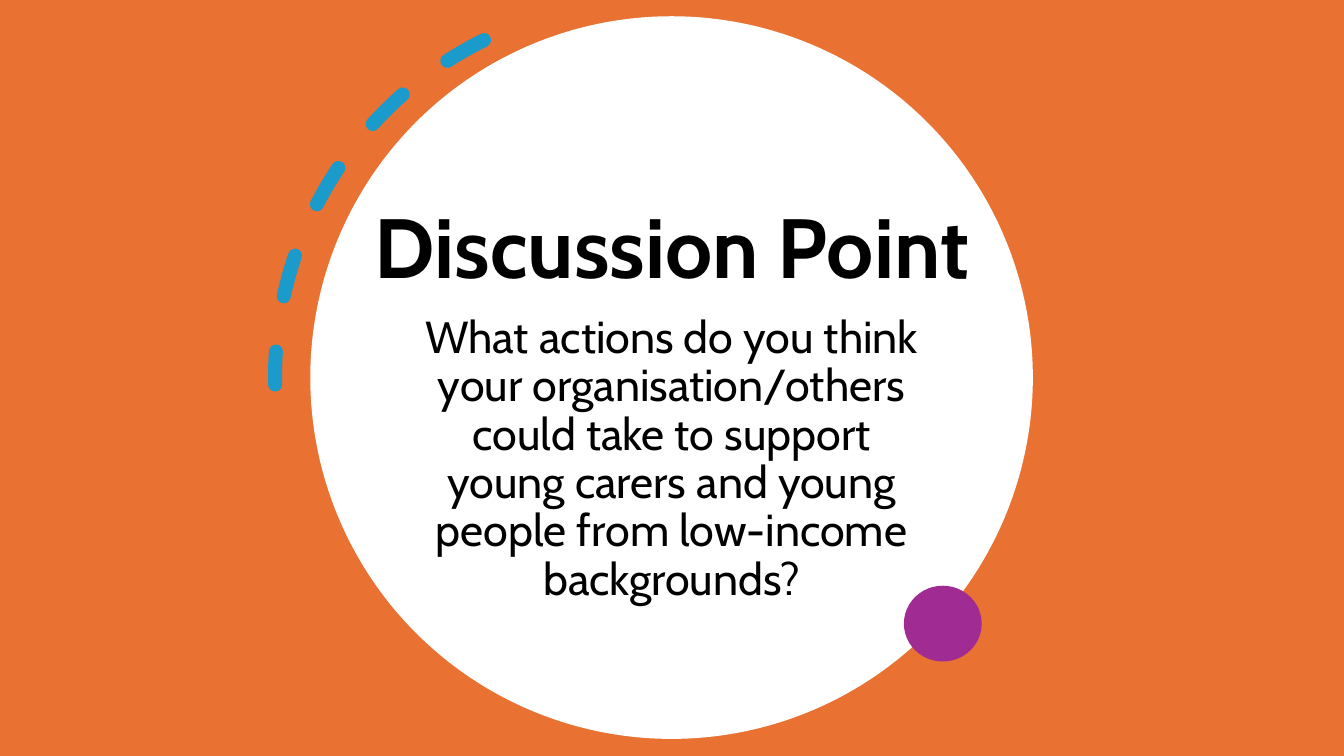
from lxml.etree import SubElement
from pptx import Presentation
from pptx.dml.color import RGBColor
from pptx.enum.dml import MSO_LINE
from pptx.enum.shapes import MSO_SHAPE
from pptx.enum.text import MSO_ANCHOR, PP_ALIGN
from pptx.oxml.ns import qn
from pptx.util import Cm, Pt

COLOURS = {
    "background": "E97132",
    "circle": "FFFFFF",
    "text": "000000",
    "arc": "0F9ED5",
    "dot": "A02B93",
}
FONT = "Cabin"
SLIDE_WIDTH, SLIDE_HEIGHT = 33.87, 19.05


def colour(name):
    return RGBColor.from_string(COLOURS[name])


def add_filled_shape(slide, kind, left, top, width, height, fill):
    shape = slide.shapes.add_shape(kind, Cm(left), Cm(top), Cm(width), Cm(height))
    shape.shadow.inherit = False
    shape.fill.solid()
    shape.fill.fore_color.rgb = colour(fill)
    shape.line.fill.background()
    return shape


def add_dashed_arc(slide, left, top, diameter, start, end, rotation):
    """Draw a vertically flipped arc; start and end are in degrees."""
    shape = slide.shapes.add_shape(
        MSO_SHAPE.ARC, Cm(left), Cm(top), Cm(diameter), Cm(diameter))
    shape.shadow.inherit = False
    shape.fill.background()
    # Angles are stored in 60000ths of a degree, adjustments in 100000ths
    for index, angle in enumerate((start, end)):
        shape.adjustments[index] = angle * 0.6
    shape.rotation = rotation
    shape._element.spPr.find(qn("a:xfrm")).set("flipV", "1")

    # Round, slightly transparent dashes
    line = shape.line
    line.width = Pt(10)
    line.color.rgb = colour("arc")
    line.dash_style = MSO_LINE.DASH
    line_element = shape._element.spPr.find(qn("a:ln"))
    line_element.set("cap", "rnd")
    rgb_element = line_element.find(f".//{qn('a:srgbClr')}")
    SubElement(rgb_element, qn("a:alpha"), val="95000")


def add_text(slide, text, left, top, width, height, *, size, bold=False,
             anchor=MSO_ANCHOR.TOP, space_before=0):
    box = slide.shapes.add_textbox(Cm(left), Cm(top), Cm(width), Cm(height))
    frame = box.text_frame
    frame.word_wrap = True
    frame.vertical_anchor = anchor
    paragraph = frame.paragraphs[0]
    paragraph.alignment = PP_ALIGN.CENTER
    paragraph.line_spacing = 0.9
    paragraph.space_before = Pt(space_before)
    run = paragraph.add_run()
    run.text = text
    run.font.name = FONT
    run.font.size = Pt(size)
    run.font.bold = bold
    run.font.color.rgb = colour("text")


def main():
    presentation = Presentation()
    presentation.slide_width = Cm(SLIDE_WIDTH)
    presentation.slide_height = Cm(SLIDE_HEIGHT)
    slide = presentation.slides.add_slide(presentation.slide_layouts[6])

    # Backdrop and central circle
    add_filled_shape(slide, MSO_SHAPE.RECTANGLE, 0, 0, SLIDE_WIDTH,
                     SLIDE_HEIGHT, "background")
    add_filled_shape(slide, MSO_SHAPE.OVAL, 7.82, 0.41, 18.21, 18.21, "circle")

    # Heading and question
    add_text(slide, "Discussion Point", 8.84, 0.61, 16.18, 6.99,
             size=60, bold=True, anchor=MSO_ANCHOR.BOTTOM)
    add_text(slide, "What actions do you think your organisation/others could "
             "take to support young carers and young people from low-income "
             "backgrounds?", 10.39, 7.8, 13.08, 7.87, size=32, space_before=10)

    # Accents on the rim
    add_dashed_arc(slide, 6.93, 0.03, 18.92, start=270, end=334.89,
                   rotation=153.7)
    add_filled_shape(slide, MSO_SHAPE.OVAL, 22.78, 14.76, 1.96, 1.91, "dot")

    presentation.save("out.pptx")


if __name__ == "__main__":
    main()
